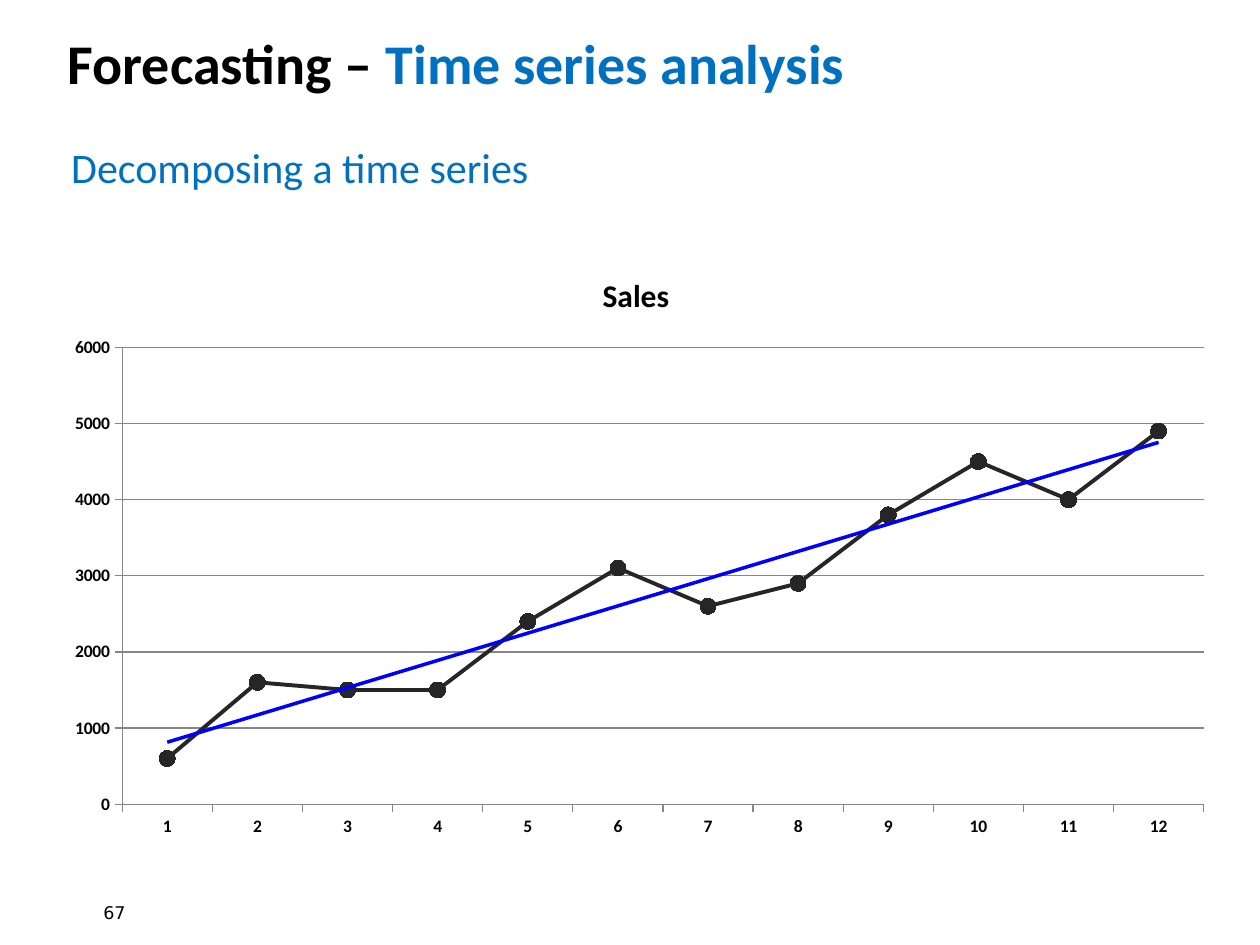
"""Build the time series decomposition slide with a sales line chart and its trend."""
from dataclasses import dataclass
from typing import NamedTuple

from lxml import etree
from pptx import Presentation
from pptx.chart.data import CategoryChartData
from pptx.dml.color import RGBColor
from pptx.enum.chart import XL_CHART_TYPE, XL_MARKER_STYLE, XL_TICK_MARK
from pptx.enum.text import MSO_ANCHOR, MSO_AUTO_SIZE, PP_ALIGN
from pptx.oxml import parse_xml
from pptx.oxml.ns import nsdecls, qn
from pptx.util import Pt

LINE_MARKERS = XL_CHART_TYPE.LINE_MARKERS
CIRCLE = XL_MARKER_STYLE.CIRCLE
OUTSIDE, NO_TICK = XL_TICK_MARK.OUTSIDE, XL_TICK_MARK.NONE
MIDDLE, LEFT, NO_FIT = MSO_ANCHOR.MIDDLE, PP_ALIGN.LEFT, MSO_AUTO_SIZE.NONE


@dataclass(frozen=True)
class Theme:
    font: str = "Calibri"
    number_font: str = "DejaVu Sans"
    black: RGBColor = RGBColor(0x00, 0x00, 0x00)
    blue: RGBColor = RGBColor(0x00, 0x70, 0xC0)
    series: RGBColor = RGBColor(0x26, 0x26, 0x26)
    trend: RGBColor = RGBColor(0x00, 0x00, 0xFF)
    grid: RGBColor = RGBColor(0x86, 0x86, 0x86)
    title_size: int = 32
    subtitle_size: int = 24
    chart_title_size: int = 18
    small_size: int = 10


class Box(NamedTuple):
    left: float
    top: float
    width: float
    height: float


class Run(NamedTuple):
    text: str
    color: RGBColor


class Label(NamedTuple):
    box: Box
    runs: list[Run]
    size: int
    font: str
    bold: bool = False


THEME = Theme()
TITLE = Label(
    Box(31.4, 12.5, 546.5, 46),
    [Run("Forecasting – ", THEME.black), Run("Time series analysis", THEME.blue)],
    THEME.title_size, THEME.font, True,
)
SUBTITLE = Label(
    Box(33.5, 77, 314, 36), [Run("Decomposing a time series", THEME.blue)],
    THEME.subtitle_size, THEME.font,
)
PAGE_NUMBER = Label(
    Box(52, 502.6, 50.4, 37.4), [Run("67", THEME.black)],
    THEME.small_size, THEME.number_font,
)
CHART_BOX = Box(29.5, 142.6, 671.8, 342)
PLOT_PERCENT = {"x": 6, "y": 16.35, "w": 92, "h": 76.35}
SALES = [600, 1600, 1500, 1500, 2400, 3100, 2600, 2900, 3800, 4500, 4000, 4900]


def write_label(sp, label: Label) -> None:
    """Place a text shape and fill it with one formatted paragraph."""
    sp.left, sp.top, sp.width, sp.height = (Pt(v) for v in label.box)
    tf = sp.text_frame
    tf.word_wrap = False
    tf.auto_size = NO_FIT
    tf.vertical_anchor = MIDDLE
    p = tf.paragraphs[0]
    p.alignment = LEFT
    p.space_before = Pt(0)
    p_pr = p._p.get_or_add_pPr()
    p_pr.set("marL", "0")
    p_pr.set("indent", "0")
    etree.SubElement(p_pr, qn("a:buNone"))
    p.font.name = label.font
    p.font.size = Pt(label.size)
    p.font.bold = label.bold
    for run in label.runs:
        r = p.add_run()
        r.text = run.text
        r.font.color.rgb = run.color


def style_axis(axis) -> None:
    """Give an axis bold labels, outside ticks and a grey line."""
    axis.major_tick_mark = OUTSIDE
    axis.minor_tick_mark = NO_TICK
    axis.tick_labels.font.bold = True
    axis.tick_labels.font.size = Pt(THEME.small_size)
    axis.format.line.color.rgb = THEME.grid
    axis.format.line.width = Pt(0.75)


def add_trend(series, color: RGBColor, width: float) -> None:
    """Add a linear trend line to a series."""
    trend = parse_xml(
        f'<c:trendline {nsdecls("c", "a")}><c:spPr><a:ln w="{Pt(width)}">'
        f'<a:solidFill><a:srgbClr val="{color}"/></a:solidFill></a:ln></c:spPr>'
        '<c:trendlineType val="linear"/><c:dispRSqr val="0"/><c:dispEq val="0"/>'
        "</c:trendline>"
    )
    series._element.find(qn("c:cat")).addprevious(trend)


def set_plot_layout(chart, percent: dict[str, float]) -> None:
    """Fix the inner plot area as percentages of the chart."""
    area = chart._chartSpace.chart.plotArea
    for old in area.findall(qn("c:layout")):
        area.remove(old)
    parts = "".join(f'<c:{k}Mode val="edge"/>' for k in "xy")
    parts += "".join(f'<c:{k} val="{v / 100:.4f}"/>' for k, v in percent.items())
    area.insert(0, parse_xml(
        f'<c:layout {nsdecls("c")}><c:manualLayout><c:layoutTarget val="inner"/>'
        f"{parts}</c:manualLayout></c:layout>"
    ))


def add_sales_chart(slide, box: Box) -> None:
    """Draw the sales line chart with markers and trend."""
    data = CategoryChartData()
    data.categories = [str(i) for i in range(1, len(SALES) + 1)]
    data.add_series("Series 1", SALES)
    chart = slide.shapes.add_chart(LINE_MARKERS, *(Pt(v) for v in box), data).chart
    chart.font.name = THEME.font
    chart.font.size = Pt(THEME.small_size)
    chart.font.color.rgb = THEME.black
    chart.has_legend = False
    chart.has_title = True
    p = chart.chart_title.text_frame.paragraphs[0]
    p.text = "Sales "
    p.font.name = THEME.font
    p.font.size = Pt(THEME.chart_title_size)
    p.font.bold = True
    p.font.color.rgb = THEME.black

    style_axis(chart.category_axis)
    axis = chart.value_axis
    style_axis(axis)
    axis.minimum_scale, axis.maximum_scale, axis.major_unit = 0, 6000, 1000
    axis.tick_labels.number_format = "???0"
    axis.tick_labels.number_format_is_linked = False
    axis.has_major_gridlines = True
    axis.major_gridlines.format.line.color.rgb = THEME.grid
    axis.major_gridlines.format.line.width = Pt(0.75)

    chart.plots[0].vary_by_categories = False
    series = chart.plots[0].series[0]
    series.smooth = False
    series.format.line.color.rgb = THEME.series
    series.format.line.width = Pt(2.25)
    marker = series.marker
    marker.style = CIRCLE
    marker.size = 9
    marker.format.fill.solid()
    marker.format.fill.fore_color.rgb = THEME.series
    marker.format.line.color.rgb = THEME.series
    add_trend(series, THEME.trend, 2)
    set_plot_layout(chart, PLOT_PERCENT)


def main() -> None:
    """Build and save the slide."""
    prs = Presentation()
    prs.slide_width, prs.slide_height = Pt(720), Pt(540)
    slide = prs.slides.add_slide(prs.slide_layouts[1])
    write_label(slide.shapes.title, TITLE)
    write_label(slide.placeholders[1], SUBTITLE)
    write_label(slide.shapes.add_textbox(*(Pt(v) for v in PAGE_NUMBER.box)), PAGE_NUMBER)
    add_sales_chart(slide, CHART_BOX)
    prs.save("out.pptx")


if __name__ == "__main__":
    main()
